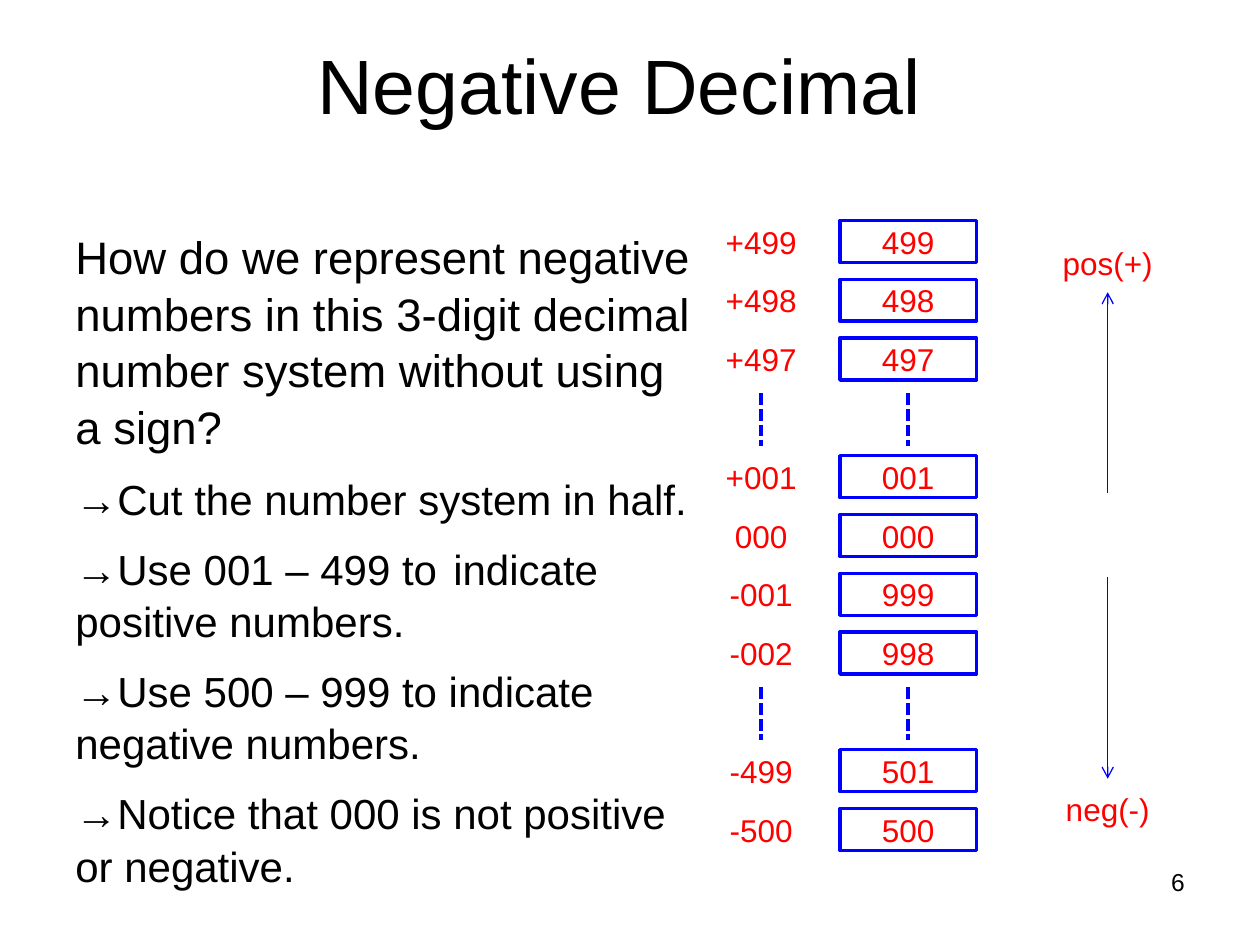
from pptx import Presentation
from pptx.dml.color import RGBColor
from pptx.enum.dml import MSO_LINE
from pptx.enum.shapes import MSO_CONNECTOR, MSO_SHAPE
from pptx.enum.text import MSO_ANCHOR, PP_ALIGN
from pptx.oxml.ns import qn
from pptx.util import Pt
from lxml import etree

BLACK = RGBColor(0x00, 0x00, 0x00)
BLUE = RGBColor(0x00, 0x00, 0xFF)
RED = RGBColor(0xFF, 0x00, 0x00)

LABEL_FORMAT = {"name": "Arial", "size": Pt(18)}

deck = Presentation()
deck.slide_width, deck.slide_height = Pt(720), Pt(540)
slide = deck.slides.add_slide(deck.slide_layouts[6])


def write(holder, text, size, color, align, anchor, inset=0, line_spacing=None):
    """Fill a shape or text box; text is a list of paragraphs, size a list to match."""
    frame = holder.text_frame
    frame_format = {"word_wrap": True, "vertical_anchor": anchor,
                    "margin_left": Pt(inset), "margin_right": Pt(inset),
                    "margin_top": Pt(inset / 2), "margin_bottom": Pt(inset / 2)}
    for key, value in frame_format.items():
        setattr(frame, key, value)
    frame.text = "\n".join(text)
    for paragraph, points in zip(frame.paragraphs, size):
        paragraph.alignment = align
        if line_spacing:
            paragraph.line_spacing = line_spacing
            paragraph.space_after = Pt(10)
        for key, value in {"name": "Arial", "size": Pt(points)}.items():
            setattr(paragraph.font, key, value)
        paragraph.font.color.rgb = color


def draw_line(x, start, end, width, dash=None, arrow=False):
    """Draw a vertical blue line from start to end."""
    line = slide.shapes.add_connector(MSO_CONNECTOR.STRAIGHT, Pt(x), Pt(start), Pt(x), Pt(end))
    line.line.color.rgb = BLUE
    line.line.width = Pt(width)
    if dash:
        line.line.dash_style = dash
    if arrow:
        etree.SubElement(line.line._get_or_add_ln(), qn("a:tailEnd"), type="arrow")
    etree.SubElement(line._element.spPr, qn("a:effectLst"))


# Title, explanation and page number
title = slide.shapes.add_textbox(Pt(0), Pt(0), Pt(720), Pt(96))
write(title, ["Negative Decimal "], [44], BLACK, PP_ALIGN.CENTER, MSO_ANCHOR.MIDDLE, 7.2)

explanation = slide.shapes.add_textbox(Pt(36), Pt(126), Pt(366), Pt(378))
write(explanation, [
    "How do we represent negative numbers in this 3-digit decimal number system "
    "without using a sign?",
    "→Cut the number system in half.",
    "→Use 001 – 499 to \tindicate positive numbers.",
    "→Use 500 – 999 to indicate negative numbers.",
    "→Notice that 000 is not positive or negative.",
], [26, 24, 24, 24, 24], BLACK, PP_ALIGN.LEFT, MSO_ANCHOR.TOP, 7.2, 1.04)

page_number = slide.shapes.add_textbox(Pt(516), Pt(492), Pt(168), Pt(37.5))
write(page_number, ["6"], [14], BLACK, PP_ALIGN.RIGHT, MSO_ANCHOR.TOP, 7.2)

# Number ladder: signed value beside its three-digit code, None for a skipped range
LADDER = [("+499", "499"), ("+498", "498"), ("+497", "497"), None,
          ("+001", "001"), ("000", "000"), ("-001", "999"), ("-002", "998"), None,
          ("-499", "501"), ("-500", "500")]
LADDER_TOP, ROW_PITCH, ROW_HEIGHT = 126, 33.6, 24
SIGNED_LEFT, CODE_LEFT, COLUMN_WIDTH = 396, 480, 78

for row, pair in enumerate(LADDER):
    top = LADDER_TOP + row * ROW_PITCH
    if pair is None:
        for left in (SIGNED_LEFT, CODE_LEFT):
            draw_line(left + COLUMN_WIDTH / 2, top - 2, top + 28, 2.25, MSO_LINE.SQUARE_DOT)
        continue
    signed, code = pair
    signed_label = slide.shapes.add_textbox(Pt(SIGNED_LEFT), Pt(top), Pt(COLUMN_WIDTH), Pt(ROW_HEIGHT))
    code_box = slide.shapes.add_shape(MSO_SHAPE.RECTANGLE, Pt(CODE_LEFT), Pt(top),
                                      Pt(COLUMN_WIDTH), Pt(ROW_HEIGHT))
    code_box.shadow.inherit = False
    code_box.fill.background()
    code_box.line.color.rgb = BLUE
    code_box.line.width = Pt(2)
    for holder, text in ((signed_label, signed), (code_box, code)):
        write(holder, [text], [18], RED, PP_ALIGN.CENTER, MSO_ANCHOR.MIDDLE)

# Direction arrows and their labels
for text, left, top, width, start, end in (
        ("pos(+)", 579, 138, 108, 282, 167),
        ("neg(-)", 570, 450, 126, 330, 445)):
    draw_line(633, start, end, 0.75, arrow=True)
    direction = slide.shapes.add_textbox(Pt(left), Pt(top), Pt(width), Pt(ROW_HEIGHT))
    write(direction, [text], [18], RED, PP_ALIGN.CENTER, MSO_ANCHOR.MIDDLE)

deck.save("out.pptx")
